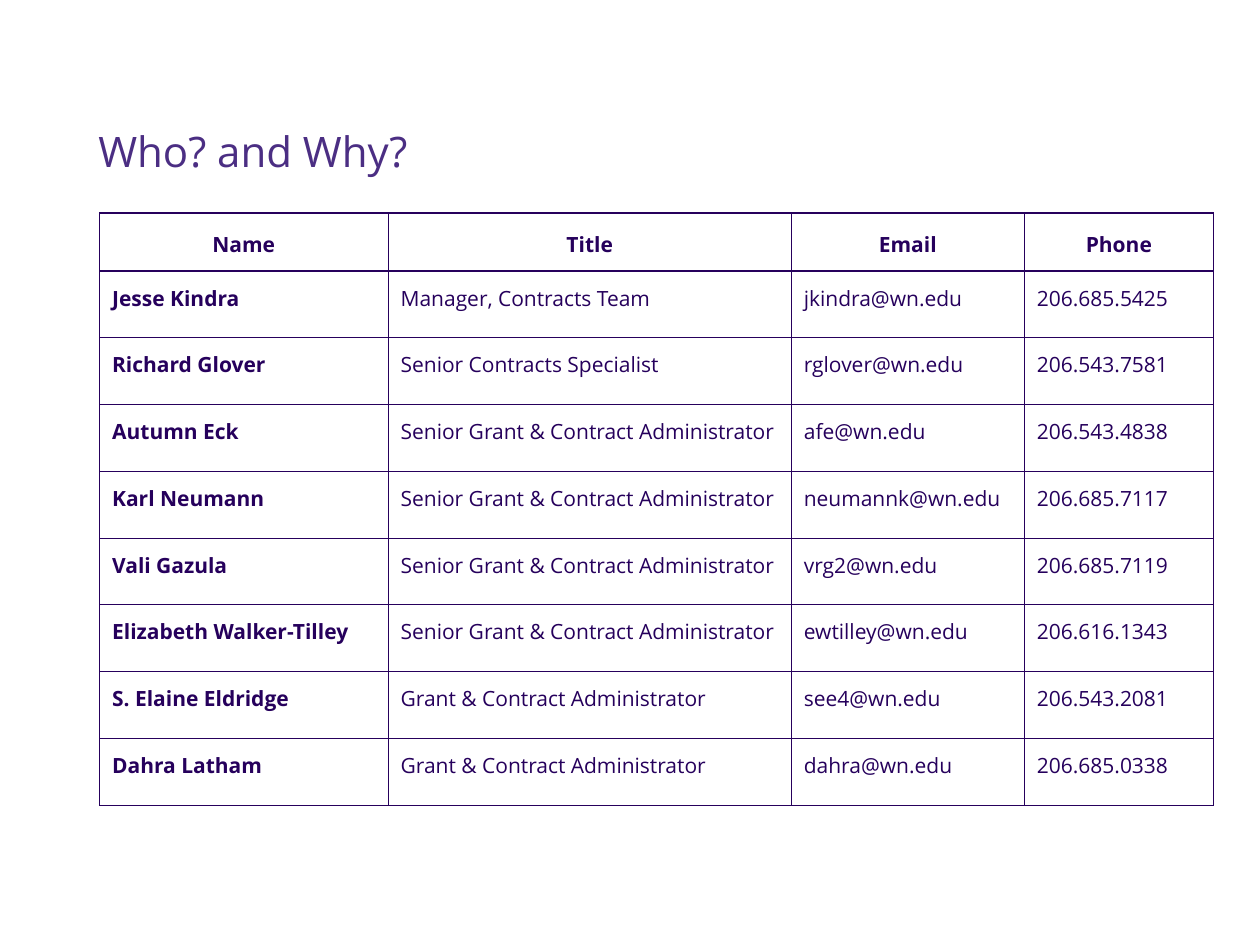
from lxml import etree
from pptx import Presentation
from pptx.dml.color import RGBColor
from pptx.enum.text import MSO_ANCHOR, PP_ALIGN
from pptx.oxml.ns import qn
from pptx.util import Inches, Pt

CENTER, LEFT = PP_ALIGN.CENTER, PP_ALIGN.LEFT
BOTTOM, TOP = MSO_ANCHOR.BOTTOM, MSO_ANCHOR.TOP
TITLE_ONLY = 5
FONT = "Open Sans"
COLORS = {"title": "4B2E83", "ink": "26005C"}
INSET = Inches(0.1)
COL_WIDTHS = [2.29, 3.2, 1.85, 1.5]
HEADER_HEIGHT, ROW_HEIGHT = 0.42, 0.53
DOMAIN = "wn.edu"
SENIOR = "Senior Grant & Contract Administrator"
JUNIOR = "Grant & Contract Administrator"
HEADERS = ["Name", "Title", "Email", "Phone"]
STAFF = [
    ("Jesse Kindra", "Manager, Contracts Team", "jkindra", "206.685.5425"),
    ("Richard Glover", "Senior Contracts Specialist", "rglover", "206.543.7581"),
    ("Autumn Eck", SENIOR, "afe", "206.543.4838"),
    ("Karl Neumann", SENIOR, "neumannk", "206.685.7117"),
    ("Vali Gazula", SENIOR, "vrg2", "206.685.7119"),
    ("Elizabeth Walker-Tilley", SENIOR, "ewtilley", "206.616.1343"),
    ("S. Elaine Eldridge", JUNIOR, "see4", "206.543.2081"),
    ("Dahra Latham", JUNIOR, "dahra", "206.685.0338"),
]


def style_paragraph(p, size, color, bold=False, align=LEFT, spacing=1.0):
    """Set the font, alignment and line spacing of a paragraph."""
    p.font.name = FONT
    p.font.size = Pt(size)
    p.font.bold = bold
    p.font.color.rgb = RGBColor.from_string(COLORS[color])
    p.alignment = align
    p.line_spacing = spacing


def set_insets(box):
    """Give a cell or text frame equal margins on all sides."""
    box.margin_left = box.margin_right = INSET
    box.margin_top = box.margin_bottom = INSET


def add_title(s, text):
    """Place and format the slide title."""
    sp = s.shapes.title
    sp.left, sp.top = Inches(0.68), Inches(0.42)
    sp.width, sp.height = Inches(8.95), Inches(1.08)
    tf = sp.text_frame
    tf.text = text
    tf.word_wrap = True
    tf.vertical_anchor = BOTTOM
    set_insets(tf)
    p = tf.paragraphs[0]
    style_paragraph(p, 24, "title", spacing=0.9)
    p.space_before = Pt(6)


def set_borders(cell):
    """Draw a thin line on all four sides of a cell."""
    tc_pr = cell._tc.get_or_add_tcPr()
    for i, side in enumerate(("a:lnL", "a:lnR", "a:lnT", "a:lnB")):
        ln = etree.Element(qn(side), w=str(Pt(0.75)))
        fill = etree.SubElement(ln, qn("a:solidFill"))
        etree.SubElement(fill, qn("a:srgbClr"), val=COLORS["ink"])
        tc_pr.insert(i, ln)


def fill_cell(cell, text, header, bold):
    """Write one cell with its text style and borders."""
    cell.text = text
    cell.vertical_anchor = TOP
    set_insets(cell)
    cell.fill.background()
    set_borders(cell)
    style_paragraph(cell.text_frame.paragraphs[0], 12, "ink", bold,
                    CENTER if header else LEFT, 1.15 if header else 1.0)


def add_staff_table(s):
    """Add the contact table with a header row and one row per person."""
    rows = [HEADERS] + [(name, title, f"{user}@{DOMAIN}", phone)
                        for name, title, user, phone in STAFF]
    heights = [HEADER_HEIGHT] + [ROW_HEIGHT] * len(STAFF)
    table = s.shapes.add_table(
        len(rows), len(HEADERS), Inches(0.79), Inches(1.69),
        Inches(sum(COL_WIDTHS)), Inches(sum(heights))).table
    table.first_row = table.horz_banding = False
    for column, width in zip(table.columns, COL_WIDTHS):
        column.width = Inches(width)
    for r, (values, height) in enumerate(zip(rows, heights)):
        table.rows[r].height = Inches(height)
        for c, text in enumerate(values):
            fill_cell(table.cell(r, c), text, r == 0, r == 0 or c == 0)


def main():
    """Build and save the slide."""
    prs = Presentation()
    prs.slide_width, prs.slide_height = Inches(10), Inches(7.5)
    s = prs.slides.add_slide(prs.slide_layouts[TITLE_ONLY])
    add_title(s, "Who? and Why?")
    add_staff_table(s)
    prs.save("out.pptx")


if __name__ == "__main__":
    main()
